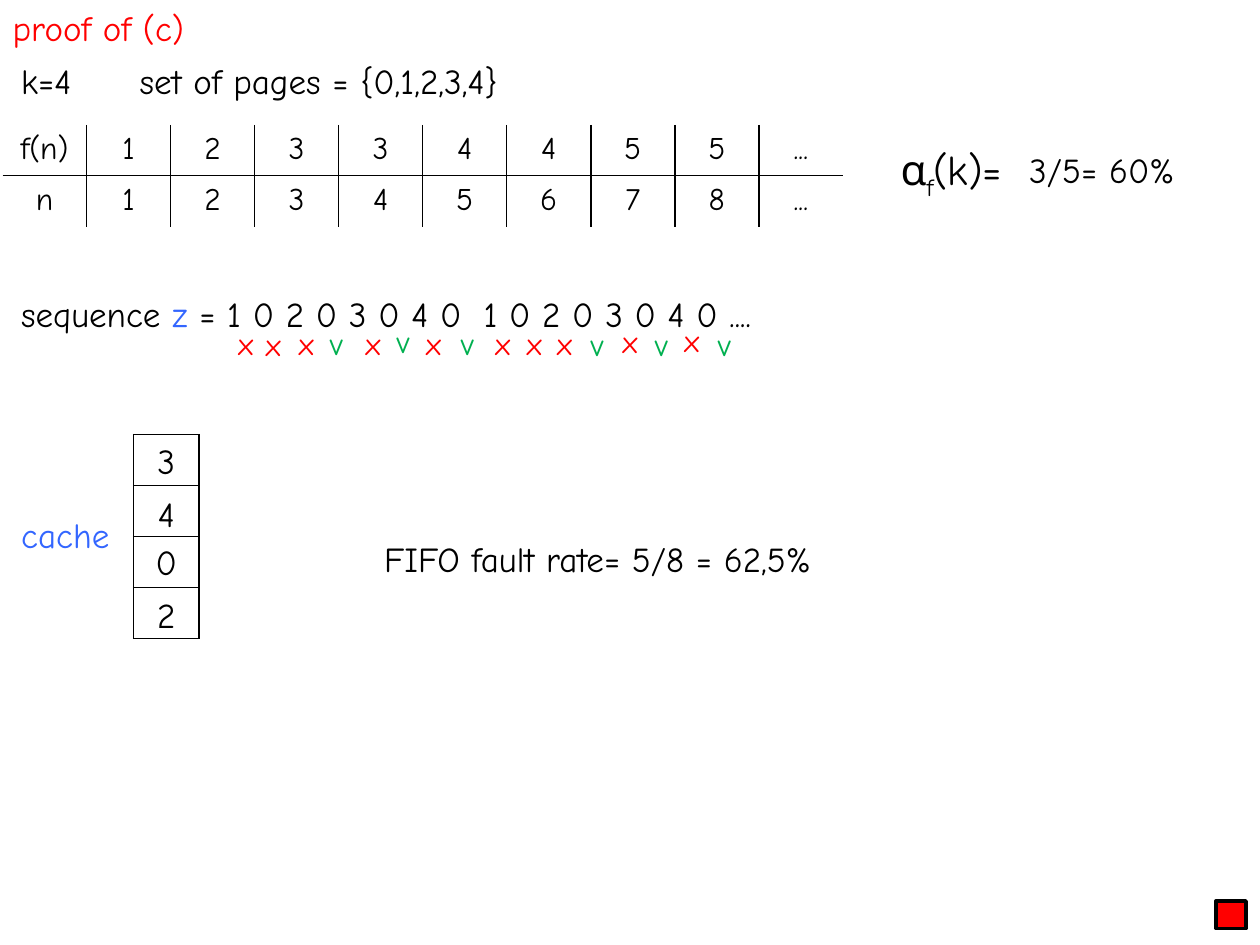
"""Build the slide that compares the FIFO fault rate with the locality bound."""

from typing import NamedTuple

from lxml import etree
from pptx import Presentation
from pptx.dml.color import RGBColor
from pptx.enum.shapes import MSO_SHAPE
from pptx.enum.text import MSO_ANCHOR, MSO_AUTO_SIZE, PP_ALIGN
from pptx.oxml.ns import qn
from pptx.util import Inches, Pt

BLACK = RGBColor(0x00, 0x00, 0x00)
RED = RGBColor(0xFF, 0x00, 0x00)
GREEN = RGBColor(0x00, 0xB0, 0x50)
BLUE = RGBColor(0x33, 0x66, 0xFF)
FONT = "Comic Neue"
LEFT = PP_ALIGN.LEFT
CENTER = PP_ALIGN.CENTER
TOP = MSO_ANCHOR.TOP
FIT_SHAPE = MSO_AUTO_SIZE.SHAPE_TO_FIT_TEXT
RECTANGLE = MSO_SHAPE.RECTANGLE
SIDES = ("L", "R", "T", "B")


class Span(NamedTuple):
    text: str
    color: RGBColor | None = None
    baseline: int = 0


class Label(NamedTuple):
    spans: list[Span]
    left: float
    top: float
    width: float
    height: float = 0.44
    size: int = 20
    color: RGBColor = BLACK
    align: PP_ALIGN = LEFT
    tab: float | None = None


class Mark(NamedTuple):
    letter: str
    left: float
    top: float = 2.52


TITLE = Label([Span("proof of (c)")], 0, 0, 9.93, color=RED)
LABELS = [
    Label([Span("k=4\tset of pages = {0,1,2,3,4}")], 0.07, 0.42, 8.27, tab=0.94),
    Label([Span("α"), Span("f", baseline=-25000), Span("(k)=")],
          7.05, 1.09, 1.45, 0.5, 24),
    Label([Span("3/5= 60%")], 8.07, 1.13, 1.57),
    Label([Span("sequence "), Span("z", BLUE),
           Span(" = 1 0 2 0 3 0 4 0\t1 0 2 0 3 0 4 0 ....")],
          0.07, 2.27, 8.27, tab=3.67),
    Label([Span("cache")], 0.07, 4.03, 1.02, color=BLUE),
    Label([Span("FIFO fault rate= 5/8 = 62,5%")], 2.95, 4.22, 5.24),
]
CACHE = [("3", 3.44), ("4", 3.86), ("0", 4.24), ("2", 4.66)]
MARKS = [
    Mark("x", 1.69), Mark("x", 1.91, 2.53), Mark("x", 2.17), Mark("v", 2.41),
    Mark("x", 2.7), Mark("v", 2.94, 2.51), Mark("x", 3.18), Mark("v", 3.45),
    Mark("x", 3.73), Mark("x", 3.98), Mark("x", 4.22), Mark("v", 4.48, 2.53),
    Mark("x", 4.74, 2.51), Mark("v", 4.99, 2.53), Mark("x", 5.23, 2.5),
    Mark("v", 5.49, 2.53),
]
MARK_COLORS = {"x": RED, "v": GREEN}
FUNCTION_ROWS = [
    ["f(n)", "1", "2", "3", "3", "4", "4", "5", "5", "..."],
    ["n", "1", "2", "3", "4", "5", "6", "7", "8", "..."],
]


def style_paragraph(paragraph, size: int, color: RGBColor, align: PP_ALIGN) -> None:
    """Apply the slide's font and alignment to a paragraph."""
    paragraph.alignment = align
    paragraph.font.name = FONT
    paragraph.font.size = Pt(size)
    paragraph.font.color.rgb = color


def fill_label(box, label: Label) -> None:
    """Place a text shape and write its spans."""
    box.left, box.top = Inches(label.left), Inches(label.top)
    box.width, box.height = Inches(label.width), Inches(label.height)
    frame = box.text_frame
    frame.word_wrap = True
    frame.auto_size = FIT_SHAPE
    frame.vertical_anchor = TOP
    paragraph = frame.paragraphs[0]
    if label.tab is not None:
        properties = paragraph._p.get_or_add_pPr()
        tabs = etree.SubElement(properties, qn("a:tabLst"))
        etree.SubElement(tabs, qn("a:tab"), pos=str(Inches(label.tab)), algn="l")
    style_paragraph(paragraph, label.size, label.color, label.align)
    for span in label.spans:
        run = paragraph.add_run()
        run.text = span.text
        if span.color is not None:
            run.font.color.rgb = span.color
        if span.baseline:
            run._r.get_or_add_rPr().set("baseline", str(span.baseline))


def add_label(page, label: Label) -> None:
    """Add one text box."""
    fill_label(page.shapes.add_textbox(0, 0, 0, 0), label)


def set_borders(cell, visible: str) -> None:
    """Draw the named cell sides in black and hide the others."""
    properties = cell._tc.get_or_add_tcPr()
    for index, side in enumerate(SIDES):
        line = etree.Element(qn(f"a:ln{side}"), w=str(Pt(1)))
        if side in visible:
            fill = etree.SubElement(line, qn("a:solidFill"))
            etree.SubElement(fill, qn("a:srgbClr"), val=str(BLACK))
        else:
            etree.SubElement(line, qn("a:noFill"))
        properties.insert(index, line)


def add_grid(page, rows: list[list[str]], left: float, top: float,
             width: float, height: float, framed: bool) -> None:
    """Add an unfilled table with inner lines and an optional outer frame."""
    row_count, column_count = len(rows), len(rows[0])
    table = page.shapes.add_table(row_count, column_count, Inches(left), Inches(top),
                                  Inches(width), Inches(height)).table
    table.first_row = False
    table.horz_banding = False
    for row, texts in enumerate(rows):
        for column, text in enumerate(texts):
            cell = table.cell(row, column)
            cell.fill.background()
            inner = {"L": column > 0, "R": column < column_count - 1,
                     "T": row > 0, "B": row < row_count - 1}
            set_borders(cell, "".join(s for s in SIDES if framed or inner[s]))
            if text:
                cell.text = text
                style_paragraph(cell.text_frame.paragraphs[0], 18, BLACK, CENTER)


def add_end_square(page) -> None:
    """Add the red square that ends the proof."""
    square = page.shapes.add_shape(RECTANGLE, Inches(9.65), Inches(7.15),
                                   Inches(0.24), Inches(0.22))
    square.shadow.inherit = False
    square.fill.solid()
    square.fill.fore_color.rgb = RED
    square.line.color.rgb = BLACK
    square.line.width = Pt(2)


def main() -> None:
    """Build and save the deck."""
    deck = Presentation()
    deck.slide_width, deck.slide_height = Inches(10), Inches(7.5)
    page = deck.slides.add_slide(deck.slide_layouts[5])
    fill_label(page.shapes.title, TITLE)
    add_grid(page, FUNCTION_ROWS, 0.02, 0.99, 6.67, 0.81, framed=False)
    add_grid(page, [[""] for _ in CACHE], 1.06, 3.45, 0.52, 1.62, framed=True)
    for label in LABELS:
        add_label(page, label)
    for digit, top in CACHE:
        add_label(page, Label([Span(digit)], 0.95, top, 0.74, align=CENTER))
    for mark in MARKS:
        add_label(page, Label([Span(mark.letter)], mark.left, mark.top, 0.52, 0.4,
                              18, MARK_COLORS[mark.letter], CENTER))
    add_end_square(page)
    deck.save("out.pptx")


if __name__ == "__main__":
    main()
